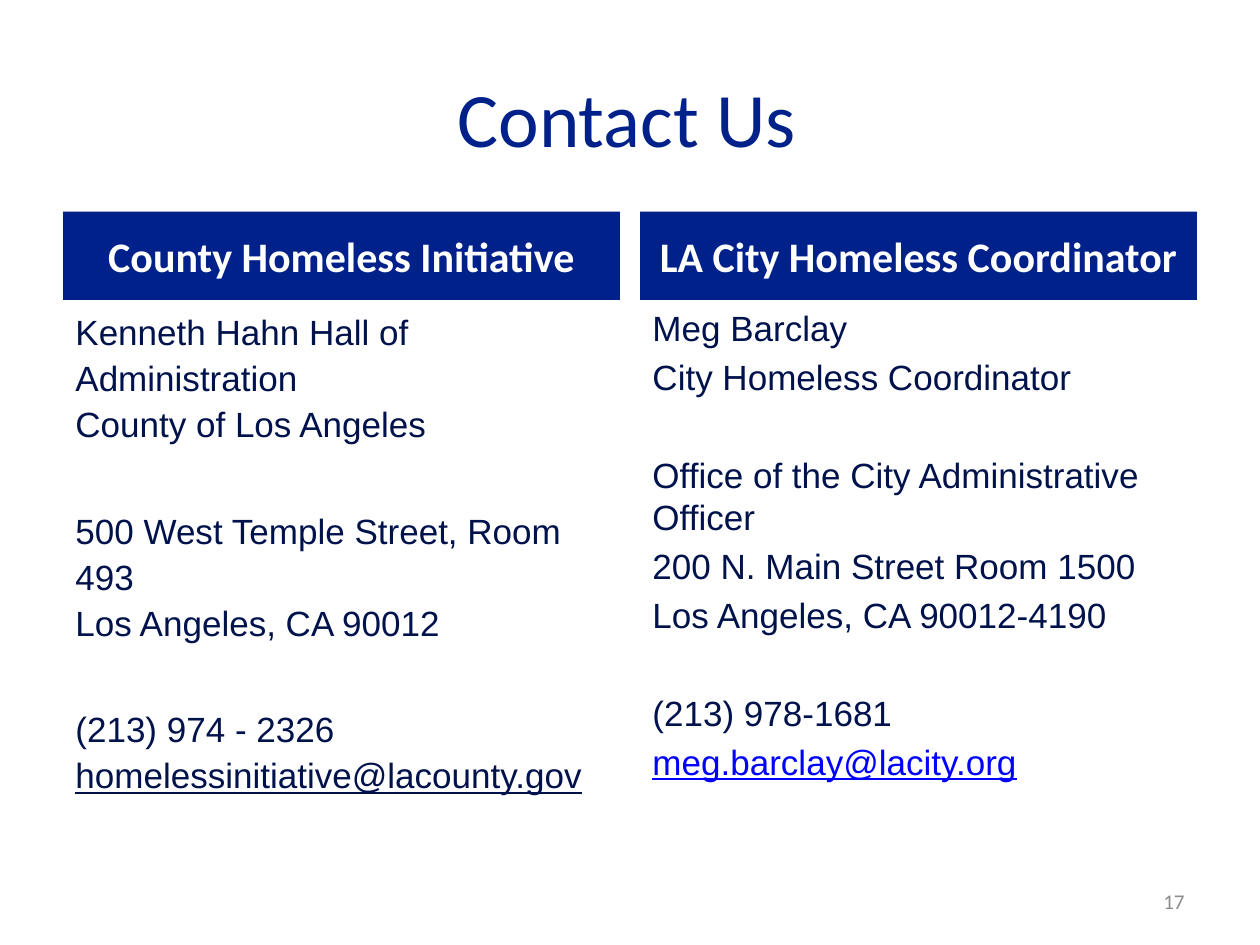
from pptx import Presentation
from pptx.dml.color import RGBColor
from pptx.enum.shapes import MSO_SHAPE as Shape
from pptx.enum.text import MSO_ANCHOR as Anchor, PP_ALIGN as Align
from pptx.util import Inches, Pt

NAVY, INK, LINK, GREY, WHITE = "00218A", "00124C", "0000FF", "8C8C8C", "FFFFFF"

# Content: each contact has groups of paragraphs; the e-mail closes the last one
TITLE = "Contact Us"
PAGE_NUMBER = "17"
CONTACTS = [
    {
        "heading": "County Homeless Initiative",
        "groups": [
            ["Kenneth Hahn Hall of Administration\vCounty of Los Angeles"],
            ["500 West Temple Street, Room 493\vLos Angeles, CA 90012"],
            ["(213) 974 - 2326\v"],
        ],
        "email": "homelessinitiative@lacounty.gov",
        "email_color": INK,
        "email_on_new_paragraph": False,
        "line_spacing": 1.1,
        "group_gap": 34.4,
    },
    {
        "heading": "LA City Homeless Coordinator",
        "groups": [
            ["Meg Barclay", "City Homeless Coordinator"],
            ["Office of the City Administrative Officer",
             "200 N. Main Street Room 1500",
             "Los Angeles, CA 90012-4190"],
            ["(213) 978-1681"],
        ],
        "email": "meg.barclay@lacity.org",
        "email_color": LINK,
        "email_on_new_paragraph": True,
        "line_spacing": 1.0,
        "group_gap": 32,
    },
]

# Layout in inches, paragraph gap in points
MARGIN, COLUMN_WIDTH, COLUMN_STEP = 0.5, 4.42, 4.58
HEADING_TOP, HEADING_HEIGHT, BODY_HEIGHT = 1.68, 0.7, 4.32
PARAGRAPH_GAP = 4


def rgb(value):
    return RGBColor.from_string(value)


def set_font(font, name, size, color, bold=False):
    font.name, font.size, font.bold = name, Pt(size), bold
    font.color.rgb = rgb(color)


def set_line(shape, text, align, name, size, color, bold=False):
    """Fill a shape with one vertically centred line of text."""
    frame = shape.text_frame
    frame.word_wrap = True
    frame.vertical_anchor = Anchor.MIDDLE
    paragraph = frame.paragraphs[0]
    paragraph.text = text
    paragraph.alignment = align
    set_font(paragraph.font, name, size, color, bold)


def add_heading(slide, left, text):
    heading = slide.shapes.add_shape(
        Shape.RECTANGLE, Inches(left), Inches(HEADING_TOP),
        Inches(COLUMN_WIDTH), Inches(HEADING_HEIGHT))
    heading.shadow.inherit = False
    heading.fill.solid()
    heading.fill.fore_color.rgb = rgb(NAVY)
    heading.line.fill.background()
    set_line(heading, text, Align.CENTER, "Calibri", 24, WHITE, bold=True)


def add_details(slide, left, contact):
    box = slide.shapes.add_textbox(
        Inches(left), Inches(HEADING_TOP + HEADING_HEIGHT),
        Inches(COLUMN_WIDTH), Inches(BODY_HEIGHT))
    frame = box.text_frame
    frame.word_wrap = True

    # Pair every paragraph with the space before it
    lines = [(text, PARAGRAPH_GAP if index else contact["group_gap"])
             for group in contact["groups"] for index, text in enumerate(group)]
    if contact["email_on_new_paragraph"]:
        lines.append(("", PARAGRAPH_GAP))

    for index, (text, gap) in enumerate(lines):
        paragraph = frame.add_paragraph() if index else frame.paragraphs[0]
        paragraph.text = text
        paragraph.line_spacing = contact["line_spacing"]
        paragraph.space_before = Pt(gap if index else 0)
        set_font(paragraph.font, "Arial", 20, INK)

    email = paragraph.add_run()
    email.text = contact["email"]
    email.font.underline = True
    email.font.color.rgb = rgb(contact["email_color"])


def main():
    presentation = Presentation()
    presentation.slide_width, presentation.slide_height = Inches(10), Inches(7.5)
    slide = presentation.slides.add_slide(presentation.slide_layouts[5])

    # Title
    title = slide.shapes.title
    title.left, title.top = Inches(1.45), Inches(0.3)
    title.width, title.height = Inches(7.05), Inches(1.25)
    set_line(title, TITLE, Align.CENTER, "Calibri", 44, NAVY)

    # Contact columns
    for column, contact in enumerate(CONTACTS):
        left = MARGIN + column * COLUMN_STEP
        add_heading(slide, left, contact["heading"])
        add_details(slide, left, contact)

    # Page number
    number = slide.shapes.add_textbox(
        Inches(7.17), Inches(6.95), Inches(2.33), Inches(0.4))
    set_line(number, PAGE_NUMBER, Align.RIGHT, "Calibri", 12, GREY)

    presentation.save("out.pptx")


if __name__ == "__main__":
    main()
